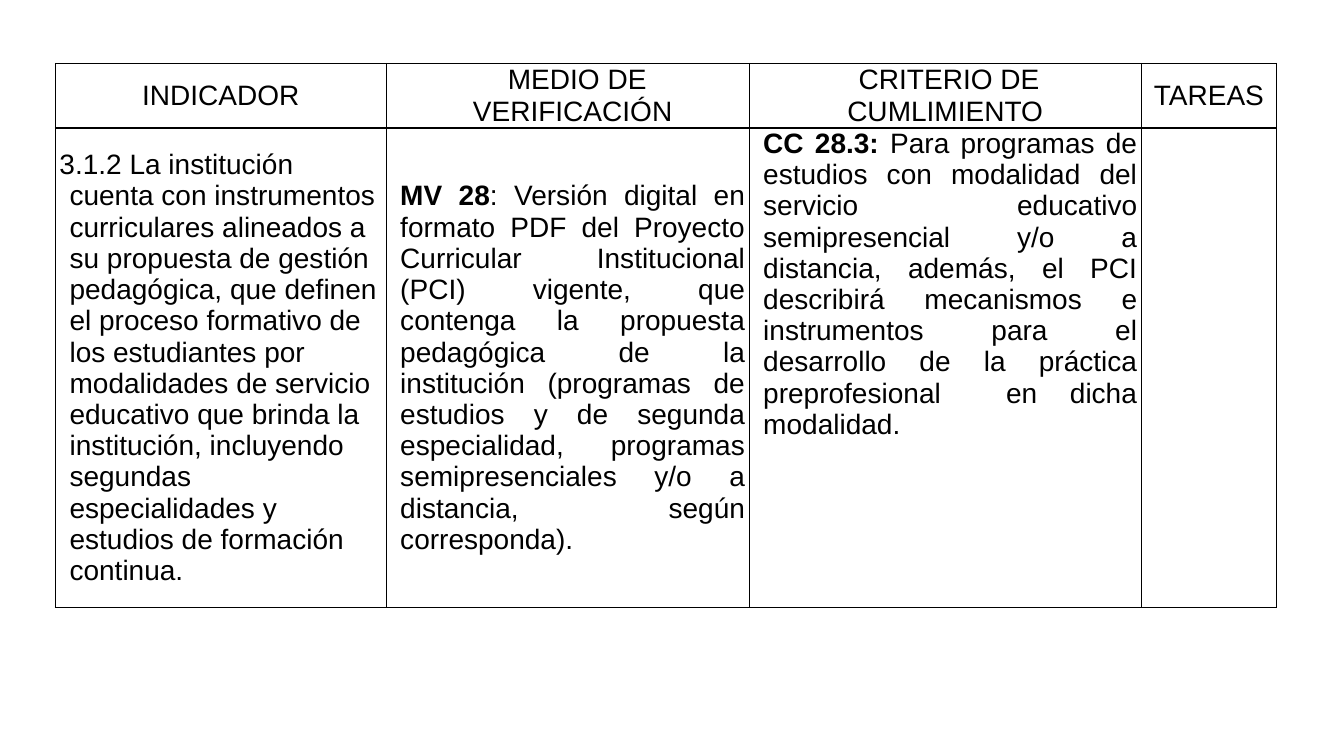
from lxml.etree import SubElement as Sub
from pptx import Presentation
from pptx.dml.color import RGBColor
from pptx.enum.text import MSO_ANCHOR as Anchor, PP_ALIGN as Align
from pptx.oxml.ns import qn
from pptx.util import Inches, Pt

UNIT = Inches(0.01)
BOX = (55, 63)
COLS = (328, 360, 389, 134)
ROWS = (64, 476)
INK, PAPER = "000000", "FFFFFF"

HEADS = (
    ("INDICADOR", 0.1, -0.1),
    ("MEDIO DE VERIFICACIÓN", 0.1, 0.09),
    (" CRITERIO DE CUMLIMIENTO", 0, 0),
    ("TAREAS", 0, 0),
)
GOAL = (
    "3.1.2 La institución cuenta con instrumentos curriculares alineados a su "
    "propuesta de gestión pedagógica, que definen el proceso formativo de los "
    "estudiantes por modalidades de servicio educativo que brinda la institución, "
    "incluyendo segundas especialidades y estudios de formación continua."
)
PROOF = (
    ": Versión digital en formato PDF del Proyecto Curricular Institucional (PCI) "
    "vigente, que contenga la propuesta pedagógica de la institución (programas de "
    "estudios y de segunda especialidad, programas semipresenciales y/o a distancia, "
    "según corresponda)."
)
RULE = (
    " Para programas de estudios con modalidad del servicio educativo "
    "semipresencial y/o a distancia, además, el PCI describirá mecanismos e "
    "instrumentos para el desarrollo de la práctica preprofesional  en dicha modalidad."
)
BODY = (
    ("", GOAL, Align.LEFT, -0.1, Anchor.MIDDLE, 12),
    ("MV 28", PROOF, Align.JUSTIFY, 0, Anchor.MIDDLE, 0),
    ("CC 28.3:", RULE, Align.JUSTIFY, 0, Anchor.TOP, 0),
)


def color(code):
    """Turn a hex string into a colour."""
    return RGBColor.from_string(code)


def frame(cell):
    """Give a cell thin borders and a plain fill."""
    props = cell._tc.get_or_add_tcPr()
    for side in ("lnL", "lnR", "lnT", "lnB"):
        line = Sub(props, qn(f"a:{side}"), w=str(Pt(1)))
        Sub(Sub(line, qn("a:solidFill")), qn("a:srgbClr"), val=INK)
    cell.fill.solid()
    cell.fill.fore_color.rgb = color(PAPER)


def write(cell, parts, align, left, first, pad, anchor=Anchor.MIDDLE, after=0):
    """Fill a cell with runs given as pairs of text and weight."""
    cell.margin_left = cell.margin_right = Inches(pad)
    cell.margin_top = cell.margin_bottom = 0
    cell.vertical_anchor = anchor
    par = cell.text_frame.paragraphs[0]
    par.alignment = align
    par.line_spacing = 1.0
    par.space_after = Pt(after)
    props = par._p.get_or_add_pPr()
    props.set("marL", str(Inches(left)))
    props.set("indent", str(Inches(first)))
    for text, bold in parts:
        run = par.add_run()
        run.text = text
        run.font.name = "Arial"
        run.font.size = Pt(20)
        run.font.bold = bold
        run.font.color.rgb = color(INK)


def grid(slide, left, top):
    """Add the framed table with its corner at the given grid point."""
    size = (left, top, sum(COLS), sum(ROWS))
    shape = slide.shapes.add_table(len(ROWS), len(COLS), *(n * UNIT for n in size))
    table = shape.table
    table.first_row = table.horz_banding = False
    for col, width in zip(table.columns, COLS):
        col.width = width * UNIT
    for row, height in zip(table.rows, ROWS):
        row.height = height * UNIT
    for cell in table.iter_cells():
        frame(cell)
    return table


def heads(row):
    """Write the column titles."""
    for cell, (text, left, first) in zip(row.cells, HEADS):
        write(cell, [(text, False)], Align.CENTER, left, first, 0.05)


def body(row):
    """Write the indicator, its evidence and its criterion."""
    for cell, (code, text, align, first, anchor, after) in zip(row.cells, BODY):
        parts = [(code, True)] if code else []
        parts.append((text, False))
        write(cell, parts, align, 0.1, first, 0.04, anchor, after)


def main():
    """Build and save the slide."""
    deck = Presentation()
    deck.slide_width, deck.slide_height = Inches(13.33), Inches(7.5)
    slide = deck.slides.add_slide(deck.slide_layouts[6])
    table = grid(slide, *BOX)
    heads(table.rows[0])
    body(table.rows[1])
    deck.save("out.pptx")


if __name__ == "__main__":
    main()
